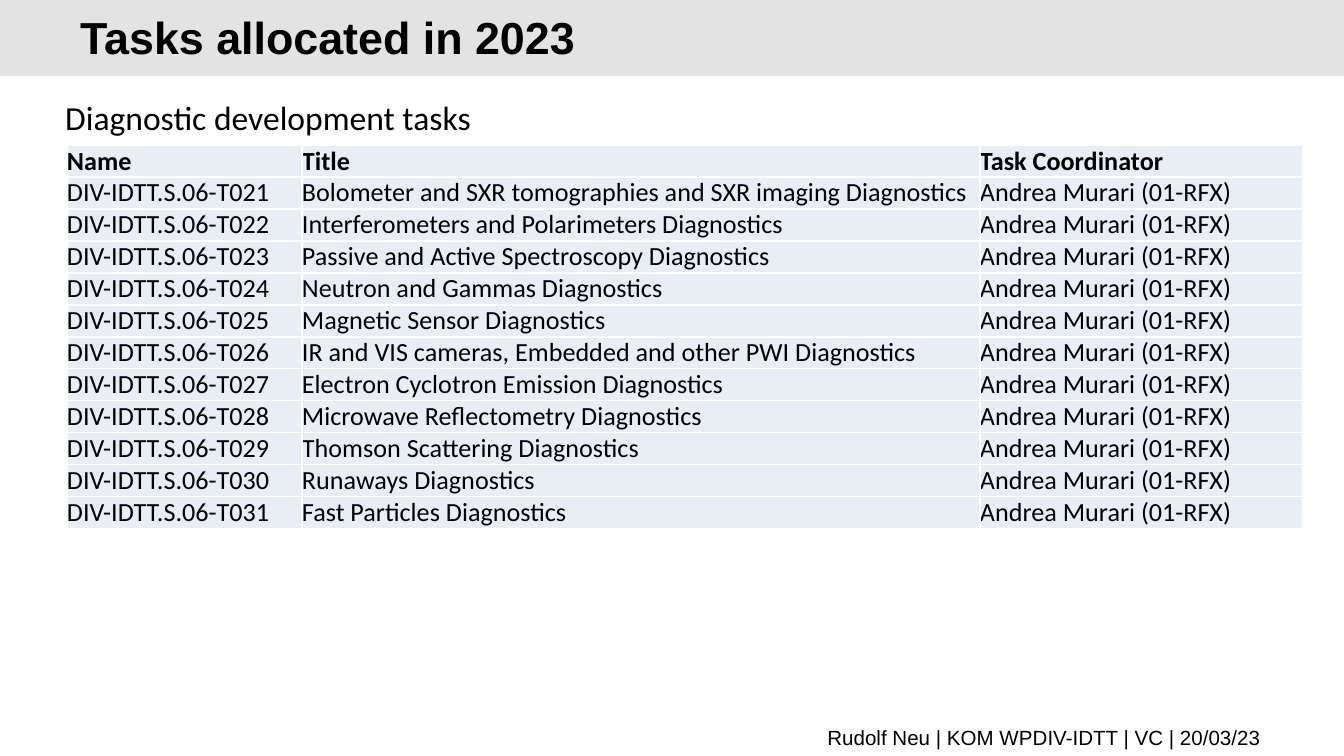
from lxml import etree
from pptx import Presentation
from pptx.dml.color import RGBColor
from pptx.enum.shapes import MSO_SHAPE
from pptx.enum.text import MSO_ANCHOR, PP_ALIGN
from pptx.oxml.ns import qn
from pptx.util import Pt

RECT = MSO_SHAPE.RECTANGLE
TOP, MIDDLE, BOTTOM = MSO_ANCHOR.TOP, MSO_ANCHOR.MIDDLE, MSO_ANCHOR.BOTTOM
LEFT, RIGHT = PP_ALIGN.LEFT, PP_ALIGN.RIGHT
BLACK = RGBColor(0x00, 0x00, 0x00)
WHITE = RGBColor(0xFF, 0xFF, 0xFF)
GREY = RGBColor(0xE3, 0xE3, 0xE3)
PALE = RGBColor(0xE9, 0xED, 0xF4)

TITLE = "Tasks allocated in 2023"
INTRO = "Diagnostic development tasks"
FOOTER = "Rudolf Neu | KOM WPDIV-IDTT | VC | 20/03/23 "
HEADS = ("Name", "Title", "Task Coordinator")
LEADER = "Andrea Murari (01-RFX)"
FIRST = 21
TASKS = [
    "Bolometer and SXR tomographies and SXR imaging Diagnostics",
    "Interferometers and Polarimeters Diagnostics",
    "Passive and Active Spectroscopy Diagnostics",
    "Neutron and Gammas Diagnostics",
    "Magnetic Sensor Diagnostics",
    "IR and VIS cameras, Embedded and other PWI Diagnostics",
    "Electron Cyclotron Emission Diagnostics",
    "Microwave Reflectometry Diagnostics",
    "Thomson Scattering Diagnostics",
    "Runaways Diagnostics",
    "Fast Particles Diagnostics",
]
WIDTHS = (235, 678, 323)
ROW = 32


def px(n):
    return round(n * 914400 / 134.4)


def style(para, name, size, bold=False):
    font = para.font
    font.name, font.size, font.bold = name, Pt(size), bold
    font.color.rgb = BLACK


def label(slide, text, box, name, size, bold=False, anchor=MIDDLE, align=LEFT, wrap=True):
    frame = slide.shapes.add_textbox(*map(px, box)).text_frame
    frame.word_wrap = wrap
    frame.vertical_anchor = anchor
    para = frame.paragraphs[0]
    para.text = text
    para.alignment = align
    style(para, name, size, bold)
    return para


def border(cell):
    props = cell._tc.get_or_add_tcPr()
    for i, side in enumerate(("lnL", "lnR", "lnT", "lnB")):
        line = etree.Element(qn("a:" + side), w=str(Pt(1)))
        fill = etree.SubElement(line, qn("a:solidFill"))
        etree.SubElement(fill, qn("a:srgbClr"), val=str(WHITE))
        props.insert(i, line)


def grid(slide, rows):
    frame = slide.shapes.add_table(
        len(rows), len(WIDTHS), px(67), px(145), px(sum(WIDTHS)), px(ROW * len(rows)))
    table = frame.table
    for col, width in zip(table.columns, WIDTHS):
        col.width = px(width)
    for r, row in enumerate(rows):
        table.rows[r].height = px(ROW)
        for c, text in enumerate(row):
            cell = table.cell(r, c)
            cell.margin_left = cell.margin_right = 0
            cell.margin_top = cell.margin_bottom = 0
            cell.vertical_anchor = BOTTOM
            cell.fill.solid()
            cell.fill.fore_color.rgb = PALE
            border(cell)
            cell.text = text
            style(cell.text_frame.paragraphs[0], "Calibri", 14, r == 0)


def main():
    deck = Presentation()
    deck.slide_width, deck.slide_height = px(1344), px(756)
    slide = deck.slides.add_slide(deck.slide_layouts[6])

    band = slide.shapes.add_shape(RECT, 0, 0, px(1344), px(76))
    band.shadow.inherit = False
    band.fill.solid()
    band.fill.fore_color.rgb = GREY
    band.line.fill.background()

    title = label(slide, TITLE, (67, 8, 1109, 51), "Arial", 24, bold=True)
    title.line_spacing = Pt(32)
    label(slide, FOOTER, (69, 722, 1211, 30), "Arial", 11, align=RIGHT)
    rows = [HEADS] + [
        (f"DIV-IDTT.S.06-T{n:03}", task, LEADER) for n, task in enumerate(TASKS, FIRST)]
    grid(slide, rows)
    label(slide, INTRO, (52, 90, 438, 54), "Calibri", 18, anchor=TOP, wrap=False)
    deck.save("out.pptx")


if __name__ == "__main__":
    main()
